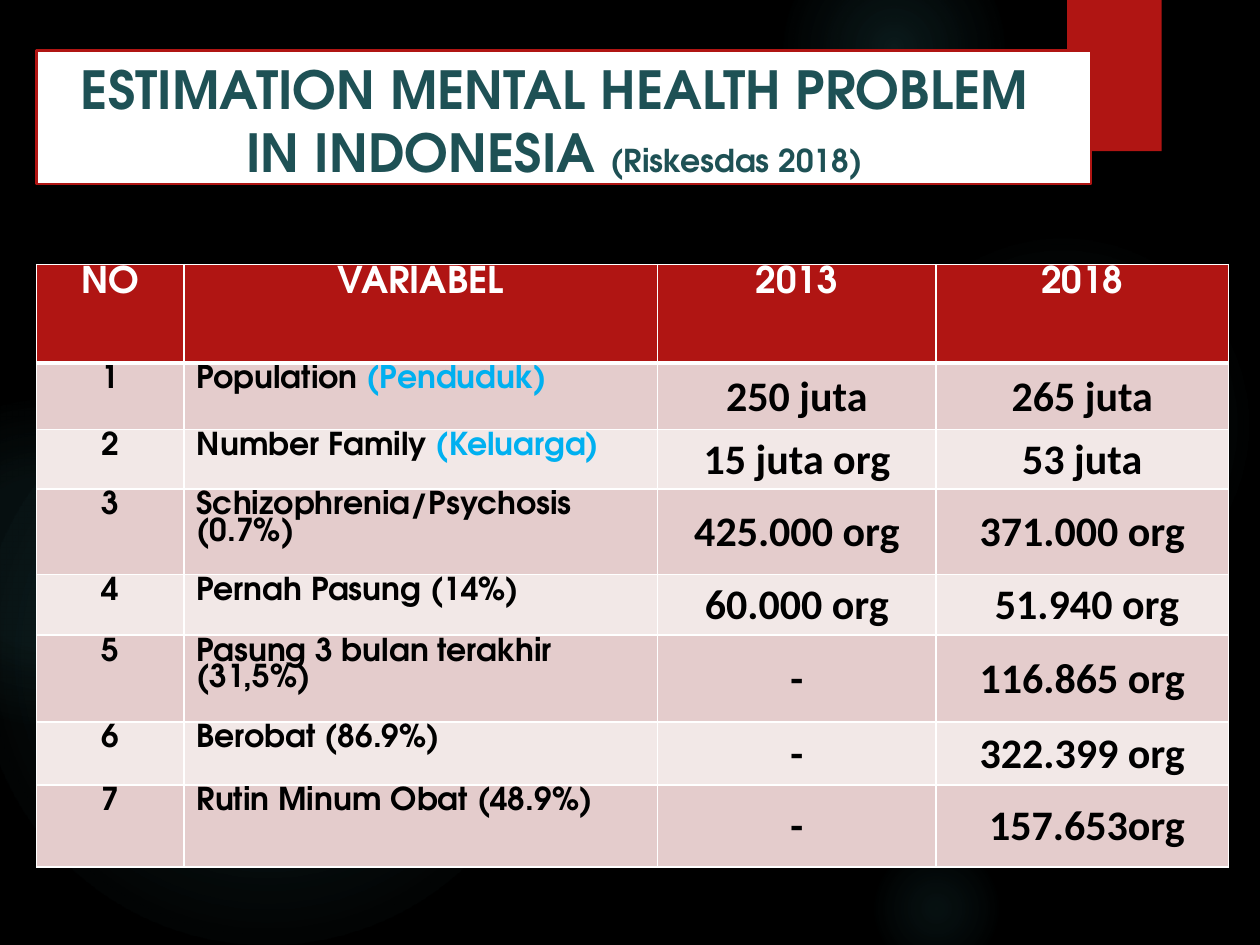
from dataclasses import dataclass

from lxml import etree
from pptx import Presentation
from pptx.dml.color import RGBColor
from pptx.enum.shapes import MSO_SHAPE
from pptx.enum.text import MSO_ANCHOR, MSO_AUTO_SIZE, PP_ALIGN
from pptx.oxml import parse_xml
from pptx.util import Inches, Pt

ELLIPSE, RECTANGLE = MSO_SHAPE.OVAL, MSO_SHAPE.RECTANGLE
TOP, MIDDLE = MSO_ANCHOR.TOP, MSO_ANCHOR.MIDDLE
LEFT, CENTER = PP_ALIGN.LEFT, PP_ALIGN.CENTER
NO_AUTO_SIZE = MSO_AUTO_SIZE.NONE
DRAWING = "http://schemas.openxmlformats.org/drawingml/2006/main"
NAMESPACE = f'xmlns:a="{DRAWING}"'
TITLE_ONLY = 5


@dataclass(frozen=True)
class Theme:
    background: str = "000000"
    accent: str = "B01513"
    glow: str = "50B9C1"
    title: str = "1E5155"
    light: str = "FFFFFF"
    dark: str = "000000"
    highlight: str = "00B0F0"
    bands: tuple = ("E4CCCC", "F2E8E7")
    heading_font: str = "TeX Gyre Adventor"
    figure_font: str = "Calibri"
    title_size: int = 30
    header_size: int = 21
    label_size: int = 18
    figure_size: int = 24
    label_spacing: float = 0.9


GLOWS = [
    (6.89, 1.83, 3.08, ((0, 7), (36, 6), (69, 0))),
    (6.22, -0.5, 1.75, ((0, 14), (36, 7), (73, 0))),
    (6.89, 6.67, 1.08, ((0, 9), (36, 5), (66, 0))),
    (-0.17, 2.92, 4.58, ((0, 11), (36, 10), (75, 0))),
    (-0.92, 3.17, 2.58, ((0, 8), (36, 8), (72, 0))),
]
COLUMN_WIDTHS = (1.17, 3.76, 2.21, 2.32)
ROW_HEIGHTS = (0.78, 0.53, 0.47, 0.68, 0.48, 0.69, 0.5, 0.65)
HEADERS = ("NO", "VARIABEL", "2013", "2018")
RECORDS = [
    ("Population ", "(Penduduk)", "250 juta", "265 juta"),
    ("Number Family ", "(Keluarga)", "15 juta org", "53 juta"),
    ("Schizophrenia/Psychosis (0.7%)", "", "425.000 org", "371.000 org"),
    ("Pernah Pasung (14%)", "", "60.000 org", " 51.940 org"),
    ("Pasung 3 bulan terakhir (31,5%)", "", "-", "116.865 org"),
    ("Berobat (86.9%)", "", "-", "322.399 org"),
    ("Rutin Minum Obat (48.9%)", "", "-", " 157.653org"),
]


def add_text(paragraph, text, *, font, size, color):
    """Append one bold run to a paragraph."""
    run = paragraph.add_run()
    run.text = text
    run.font.name = font
    run.font.size = Pt(size)
    run.font.bold = True
    run.font.color.rgb = RGBColor.from_string(color)


class SlideBuilder:
    """Draw themed elements on the current slide."""

    def __init__(self, slide, theme):
        self.slide = slide
        self.theme = theme
        self.fill(slide.background, theme.background)

    def fill(self, target, color):
        """Give a shape, cell or background a solid fill."""
        target.fill.solid()
        target.fill.fore_color.rgb = RGBColor.from_string(color)

    def shape(self, kind, left, top, width, height):
        """Add a preset shape without outline or shadow."""
        shape = self.slide.shapes.add_shape(
            kind, Inches(left), Inches(top), Inches(width), Inches(height))
        shape.shadow.inherit = False
        shape.line.fill.background()
        return shape

    def glow(self, left, top, diameter, stops):
        """Add a circle that fades out from its centre."""
        shape = self.shape(ELLIPSE, left, top, diameter, diameter)
        stop_xml = "".join(
            f'<a:gs pos="{position * 1000}"><a:srgbClr val="{self.theme.glow}">'
            f'<a:alpha val="{alpha * 1000}"/></a:srgbClr></a:gs>'
            for position, alpha in stops)
        gradient = parse_xml(
            f'<a:gradFill {NAMESPACE} rotWithShape="1"><a:gsLst>{stop_xml}</a:gsLst>'
            '<a:path path="circle"><a:fillToRect l="50000" t="50000" r="50000" b="50000"/>'
            '</a:path></a:gradFill>')
        shape._element.spPr.find(f"{{{DRAWING}}}prstGeom").addnext(gradient)

    def ribbon(self, left, top, width, height):
        """Add the accent block with a soft shadow below it."""
        shape = self.shape(RECTANGLE, left, top, width, height)
        self.fill(shape, self.theme.accent)
        effects = shape._element.spPr.find(f"{{{DRAWING}}}effectLst")
        shadow = etree.SubElement(
            effects, f"{{{DRAWING}}}outerShdw", blurRad=str(Pt(3)),
            dist=str(Pt(2)), dir="5400000", rotWithShape="0")
        color = etree.SubElement(shadow, f"{{{DRAWING}}}srgbClr", val=self.theme.dark)
        etree.SubElement(color, f"{{{DRAWING}}}alpha", val="45000")

    def title(self, text, source, left, top, width, height):
        """Place the title in front of the decoration."""
        theme = self.theme
        shape = self.slide.shapes.title
        self.slide.shapes._spTree.append(shape._element)
        shape.left, shape.top = Inches(left), Inches(top)
        shape.width, shape.height = Inches(width), Inches(height)
        self.fill(shape, theme.light)
        shape.line.color.rgb = RGBColor.from_string(theme.accent)
        shape.line.width = Pt(1.5)
        frame = shape.text_frame
        frame.word_wrap = True
        frame.auto_size = NO_AUTO_SIZE
        frame.vertical_anchor = MIDDLE
        frame.margin_right = Inches(0.25)
        frame.margin_top = Inches(0.05)
        frame.margin_bottom = Inches(0)
        paragraph = frame.paragraphs[0]
        paragraph.alignment = CENTER
        for words, size in ((text, theme.title_size), (source, theme.label_size)):
            add_text(paragraph, words, font=theme.heading_font, size=size, color=theme.title)

    def borders(self, cell, top=1, bottom=1):
        """Draw the four borders of a cell, widths in points."""
        properties = cell._tc.get_or_add_tcPr()
        for side, width in (("L", 1), ("R", 1), ("T", top), ("B", bottom)):
            properties.append(parse_xml(
                f'<a:ln{side} {NAMESPACE} w="{Pt(width)}"><a:solidFill>'
                f'<a:srgbClr val="{self.theme.light}"/></a:solidFill></a:ln{side}>'))

    def cell(self, cell, runs, *, fill, font, size, alignment=CENTER, figure=False,
             top=1, bottom=1):
        """Fill and format one table cell from (text, colour) runs."""
        self.borders(cell, top, bottom)
        self.fill(cell, fill)
        cell.vertical_anchor = MIDDLE if figure else TOP
        cell.margin_left = cell.margin_right = Inches(0.01 if figure else 0.1)
        cell.margin_top = Inches(0.01 if figure else 0.04)
        cell.margin_bottom = Inches(0 if figure else 0.04)
        paragraph = cell.text_frame.paragraphs[0]
        paragraph.alignment = alignment
        paragraph.line_spacing = 1.0 if figure else self.theme.label_spacing
        for text, color in runs:
            if text:
                add_text(paragraph, text, font=font, size=size, color=color)

    def table(self, headers, records, left, top):
        """Add the table with a header row and banded records."""
        theme = self.theme
        table = self.slide.shapes.add_table(
            len(ROW_HEIGHTS), len(COLUMN_WIDTHS), Inches(left), Inches(top),
            Inches(sum(COLUMN_WIDTHS)), Inches(sum(ROW_HEIGHTS))).table
        for column, width in zip(table.columns, COLUMN_WIDTHS):
            column.width = Inches(width)
        for row, height in zip(table.rows, ROW_HEIGHTS):
            row.height = Inches(height)
        for column, header in enumerate(headers):
            self.cell(table.cell(0, column), [(header, theme.light)], fill=theme.accent,
                      font=theme.heading_font, size=theme.header_size, bottom=3)
        for number, (label, translation, *figures) in enumerate(records, 1):
            shared = {"fill": theme.bands[(number - 1) % 2], "top": 3 if number == 1 else 1}
            heading = {"font": theme.heading_font, "size": theme.label_size, **shared}
            self.cell(table.cell(number, 0), [(str(number), theme.dark)], **heading)
            self.cell(table.cell(number, 1),
                      [(label, theme.dark), (translation, theme.highlight)],
                      alignment=LEFT, **heading)
            for column, figure in enumerate(figures, 2):
                self.cell(table.cell(number, column), [(figure, theme.dark)], figure=True,
                          font=theme.figure_font, size=theme.figure_size, **shared)


def main():
    """Build and save the presentation."""
    presentation = Presentation()
    presentation.slide_width, presentation.slide_height = Inches(10), Inches(7.5)
    slide = presentation.slides.add_slide(presentation.slide_layouts[TITLE_ONLY])
    builder = SlideBuilder(slide, Theme())
    for glow in GLOWS:
        builder.glow(*glow)
    builder.ribbon(8.47, 0, 0.75, 1.2)
    builder.title("ESTIMATION MENTAL HEALTH PROBLEM IN INDONESIA ", "(Riskesdas 2018)",
                  0.29, 0.4, 8.37, 1.06)
    builder.table(HEADERS, RECORDS, 0.29, 2.1)
    presentation.save("out.pptx")


if __name__ == "__main__":
    main()
